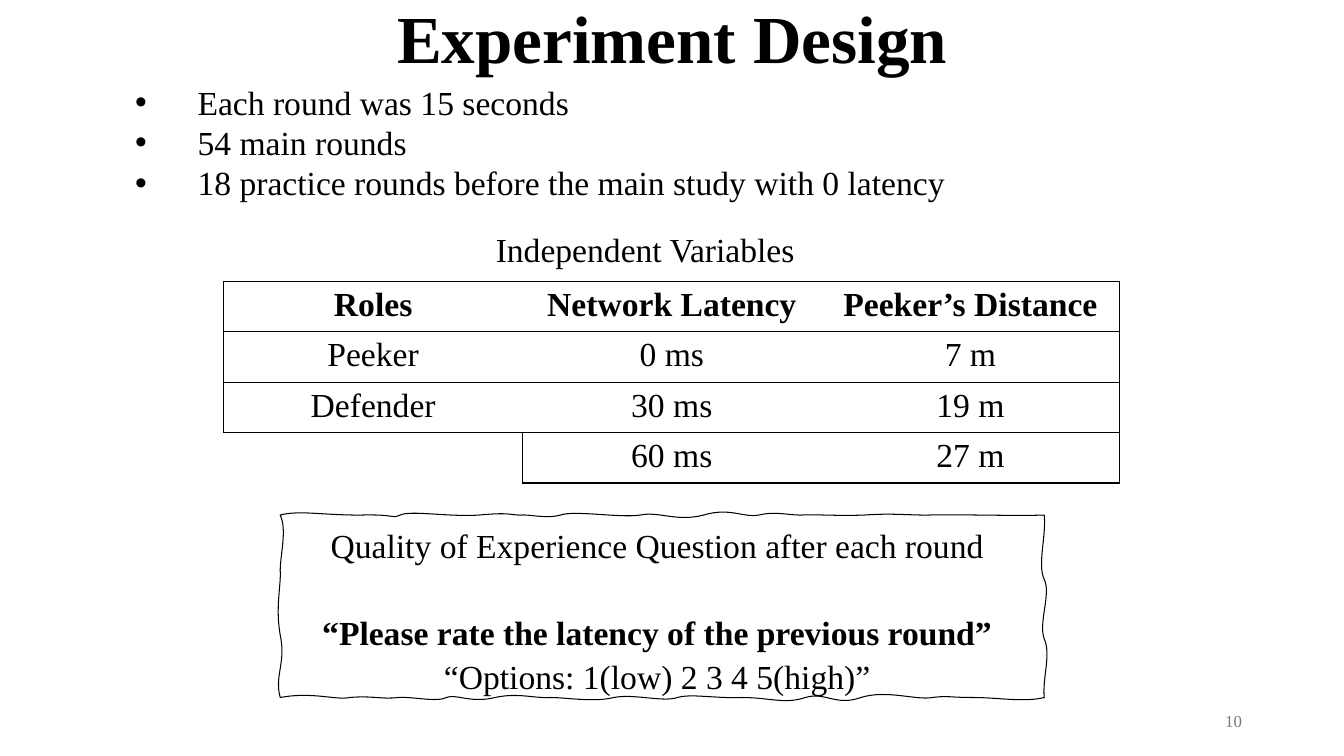
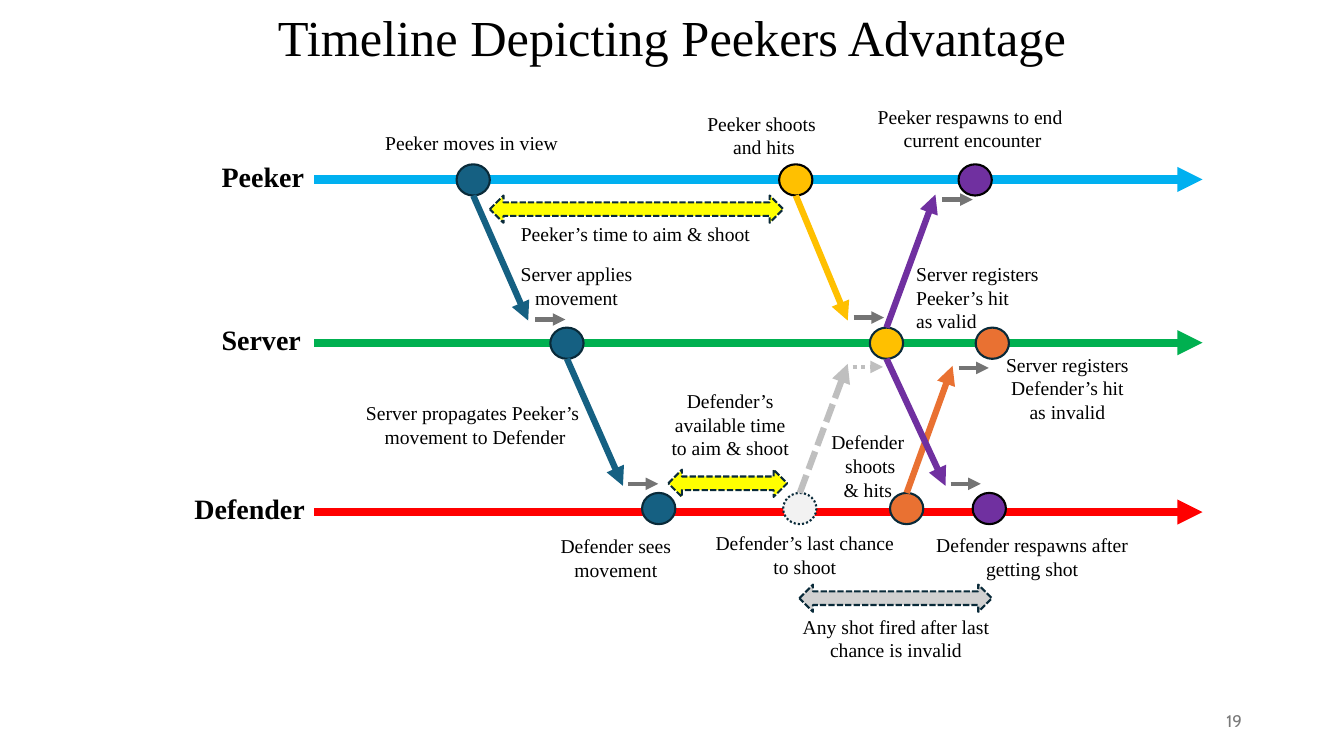
from lxml.etree import SubElement
from pptx import Presentation
from pptx.dml.color import RGBColor
from pptx.enum.dml import MSO_LINE as Dash
from pptx.enum.shapes import MSO_CONNECTOR as Connector, MSO_SHAPE as Preset
from pptx.enum.text import MSO_ANCHOR as Anchor, MSO_AUTO_SIZE as AutoSize, PP_ALIGN as Align
from pptx.oxml.ns import qn
from pptx.util import Emu, Pt

SCALE = 9144  # EMU in one px, 100 px to the inch
SERIF = "Times New Roman"
BLACK, MUTED, EDGE = "000000", "797979", "092A39"
BLUE, GOLD, ORANGE, PURPLE = "156082", "FFC000", "E97132", "7030A0"
YELLOW, HOP_GREY, PALE_GREY = "FFFF00", "747474", "BFBFBF"


def px(length):
    return Emu(round(length * SCALE))


def color(value):
    return RGBColor.from_string(value)


# Shared text and line helpers
def add_span(para, text, size, bold=False, ink=BLACK, font=SERIF):
    span = para.add_run()
    span.text = text
    span.font.name, span.font.size, span.font.bold = font, Pt(size), bold
    span.font.color.rgb = color(ink)


def write_lines(frame, lines, size, align=Align.CENTER, **style):
    frame.word_wrap = True
    for index, line in enumerate(lines):
        para = frame.paragraphs[0] if index == 0 else frame.add_paragraph()
        para.alignment = align
        add_span(para, line, size, **style)


def add_label(page, box, lines, size, align=Align.CENTER, anchor=Anchor.TOP, **style):
    frame = page.shapes.add_textbox(*map(px, box)).text_frame
    frame.vertical_anchor = anchor
    write_lines(frame, lines, size, align, **style)


def place(shape, box):
    shape.left, shape.top, shape.width, shape.height = map(px, box)


def set_line(line, ink, width, dash=None):
    line.color.rgb = color(ink)
    line.width = Pt(width)
    if dash:
        line.dash_style = dash


def add_arrow(page, start, end, ink, width, dash=None):
    arrow = page.shapes.add_connector(Connector.STRAIGHT, *map(px, (*start, *end)))
    set_line(arrow.line, ink, width, dash)
    properties = arrow.element.spPr
    SubElement(properties.find(qn("a:ln")), qn("a:tailEnd"), type="triangle")
    SubElement(properties, qn("a:effectLst"))
    return arrow


def add_preset(page, preset, box, fill, edge, dash=None):
    shape = page.shapes.add_shape(preset, *map(px, box))
    shape.shadow.inherit = False
    shape.fill.solid()
    shape.fill.fore_color.rgb = color(fill)
    set_line(shape.line, edge, 1.5, dash)
    return shape


def start_page(deck, layout, title, box, size, bold, number, number_font):
    page = deck.slides.add_slide(deck.slide_layouts[layout])
    heading = page.shapes.title
    place(heading, box)
    frame = heading.text_frame
    frame.auto_size = AutoSize.NONE
    frame.vertical_anchor = Anchor.TOP
    write_lines(frame, [title], size, bold=bold)
    frame.paragraphs[0].line_spacing = 0.9
    frame.paragraphs[0].space_before = Pt(0)
    add_label(page, (942, 695, 300, 40), [number], 12, Align.RIGHT, Anchor.MIDDLE,
              ink=MUTED, font=number_font)
    return page


# Experiment page
def fill_rounds(body, box):
    place(body, box)
    frame = body.text_frame
    frame.auto_size = AutoSize.NONE
    frame.vertical_anchor = Anchor.TOP
    write_lines(frame, [
        "Each round was 15 seconds",
        "54 main rounds",
        "18 practice rounds before the main study with 0 latency",
    ], 24, Align.LEFT)
    for para in frame.paragraphs:
        para.space_before = Pt(0)
        properties = para._p.get_or_add_pPr()
        properties.set("marL", str(px(162)))
        properties.set("indent", str(px(-62)))


def set_borders(cell, sides):
    properties = cell._tc.get_or_add_tcPr()
    for position, side in enumerate("LRTB"):
        line = SubElement(properties, qn("a:ln" + side), w=str(Pt(1)))
        if side in sides:
            paint = SubElement(line, qn("a:solidFill"))
            SubElement(paint, qn("a:srgbClr"), val=BLACK)
        else:
            SubElement(line, qn("a:noFill"))
        properties.insert(position, line)


def add_variables(page, box):
    left, top, width, height = box
    add_label(page, (left + 260, top - 57, 451, 50), ["Independent Variables"], 24, Align.LEFT)
    rows = [
        ("Roles", "Network Latency", "Peeker’s Distance"),
        ("Peeker", "0 ms", "7 m"),
        ("Defender", "30 ms", "19 m"),
        ("", "60 ms", "27 m"),
    ]
    table = page.shapes.add_table(len(rows), 3, *map(px, box)).table
    table.first_row = table.horz_banding = False
    for column in table.columns:
        column.width = px(width / 3)
    for row_index, row in enumerate(rows):
        table.rows[row_index].height = px(height / len(rows))
        for column_index, text in enumerate(row):
            cell = table.cell(row_index, column_index)
            cell.fill.background()
            if text:
                write_lines(cell.text_frame, [text], 24, bold=row_index == 0)
                outer = ("L", "", "R")[column_index]
                # The last row starts at its second column
                if row_index == 3 and column_index == 1:
                    outer = "L"
                set_borders(cell, "TB" + outer)
            else:
                set_borders(cell, "TR")


# Two control points and an end point for each curve, clockwise from top left
SKETCH = [
    (19, -5, 40, 0, 79, 0), (117, -1, 109, 4, 119, 0), (129, -5, 167, 2, 197, 0),
    (228, -3, 228, 0, 238, 0), (247, -1, 264, 4, 278, 0), (292, -5, 337, 3, 357, 0),
    (376, -4, 393, 7, 420, 0), (446, -8, 460, 3, 475, 0), (490, -4, 504, 0, 516, 0),
    (527, -1, 551, 1, 579, 0), (607, -2, 619, 0, 642, 0), (665, -1, 724, 1, 758, 0),
    (760, 22, 751, 49, 758, 64), (765, 78, 752, 107, 758, 123), (765, 138, 756, 162, 758, 181),
    (738, 186, 712, 181, 688, 181), (663, 181, 663, 179, 647, 181),
    (631, 184, 602, 173, 576, 181), (551, 190, 541, 175, 521, 181),
    (500, 188, 486, 181, 458, 181), (430, 182, 408, 177, 394, 181),
    (380, 186, 351, 177, 331, 181), (311, 186, 284, 181, 268, 181),
    (252, 182, 236, 176, 213, 181), (189, 187, 174, 177, 165, 181),
    (155, 186, 132, 180, 117, 181), (101, 183, 91, 179, 69, 181), (56, 184, 32, 175, 0, 181),
    (-6, 159, 6, 147, 0, 119), (-5, 91, 1, 70, 0, 55), (0, 39, 7, 15, 0, 0),
]


def bend_sides(shape, curves):
    """Turn each straight side of a freeform into a Bezier curve."""
    sides = list(shape.element.iter(qn("a:lnTo")))
    for side, curve in zip(sides, curves):
        bend = side.makeelement(qn("a:cubicBezTo"))
        for x, y in zip(curve[::2], curve[1::2]):
            SubElement(bend, qn("a:pt"), x=str(x), y=str(y))
        side.getparent().replace(side, bend)


def add_question(page, left, top):
    builder = page.shapes.build_freeform(0, 0, scale=SCALE)
    builder.add_line_segments([curve[4:] for curve in SKETCH], close=True)
    card = builder.convert_to_shape(px(left), px(top))
    bend_sides(card, SKETCH)
    card.shadow.inherit = False
    card.fill.background()
    set_line(card.line, BLACK, 0.75)
    frame = card.text_frame
    frame.vertical_anchor = Anchor.TOP
    frame.margin_right = px(20)
    frame.margin_top = px(7)
    write_lines(frame, [
        "Quality of Experience Question after each round",
        "“Please rate the latency of the previous round”",
        "“Options: 1(low) 2 3 4 5(high)”",
    ], 24)
    for para, spacing in zip(frame.paragraphs, (1.07, 1.07, 1.1)):
        para.line_spacing = spacing
    prompt = frame.paragraphs[1]
    prompt.space_before = Pt(31)
    prompt.runs[0].font.bold = True


def build_experiment(deck):
    page = start_page(deck, 1, "Experiment Design", (167, 0, 1000, 88), 48, True, "10", SERIF)
    fill_rounds(page.placeholders[1], (24, 76, 1266, 172))
    add_variables(page, (222, 279, 889, 200))
    add_question(page, 278, 511)


# Timeline page
def add_timeline(page, left, top):
    def at(x, y):
        return left + x, top + y

    # Lanes: name, colour, height of the line, top of its markers, left of its name
    lanes = {"Peeker": ("00B0F0", 79, 64, 30), "Server": ("00B050", 241, 226, 30),
             "Defender": ("FF0000", 409, 390, 3)}
    for name, (ink, y, _, name_left) in lanes.items():
        add_arrow(page, at(132, y), at(1013, y), ink, 6)
        add_label(page, (*at(name_left, y - 25), 140, 44), [name], 20, Align.LEFT, bold=True)

    # Event markers
    events = {
        "moves": ("Peeker", 273, BLUE, EDGE), "shoots": ("Peeker", 593, GOLD, BLACK),
        "respawns": ("Peeker", 771, PURPLE, BLACK), "applied": ("Server", 366, BLUE, EDGE),
        "valid": ("Server", 683, GOLD, EDGE), "invalid": ("Server", 788, ORANGE, EDGE),
        "seen": ("Defender", 457, BLUE, EDGE), "killed": ("Defender", 785, PURPLE, BLACK),
        "last chance": ("Defender", 597, "F2F2F2", EDGE),
        "late shot": ("Defender", 703, ORANGE, EDGE),
    }
    markers = {}
    for event, (lane, x, fill, edge) in events.items():
        dash = Dash.ROUND_DOT if event == "last chance" else None
        box = (*at(x, lanes[lane][2]), 33, 31)
        markers[event] = add_preset(page, Preset.OVAL, box, fill, edge, dash)

    # Messages between lanes: a rising one leaves the marker's top, a falling one its bottom
    for event, tip, ink, dash in [
        ("applied", (438, 383), BLUE, None), ("late shot", (765, 264), ORANGE, None),
        ("last chance", (661, 262), PALE_GREY, Dash.SQUARE_DOT),
        ("valid", (758, 383), PURPLE, None), ("moves", (344, 219), BLUE, None),
        ("shoots", (661, 219), GOLD, None), ("valid", (748, 94), PURPLE, None),
    ]:
        marker, end = markers[event], at(*tip)
        rising = px(end[1]) < marker.top
        foot = ((marker.left + marker.width / 2) / SCALE, (marker.top + marker.height) / SCALE)
        message = add_arrow(page, foot, end, ink, 4.5, dash)
        if rising:
            message.begin_connect(marker, 0)

    # Short processing delays
    for x, y in [(443, 381), (763, 381), (351, 218), (667, 216), (771, 266), (755, 99)]:
        add_arrow(page, at(x, y), at(x + 30, y), HOP_GREY, 3)
    add_arrow(page, at(666, 265), at(696, 265), PALE_GREY, 3, Dash.ROUND_DOT)

    # Time spans
    for x, y, width, fill in [(306, 95, 291, YELLOW), (483, 367, 118, YELLOW),
                              (613, 481, 191, "D1D1D1")]:
        add_preset(page, Preset.LEFT_RIGHT_ARROW, (*at(x, y), width, 27), fill, EDGE,
                   Dash.SQUARE_DOT)

    # Captions
    for x, y, width, lines in [
        (190, 26, 196, ["Peeker moves in view"]),
        (510, 7, 136, ["Peeker shoots ", "and hits"]),
        (680, 0, 210, ["Peeker respawns to end ", "current encounter"]),
        (325, 156, 134, ["Server applies", "movement"]),
        (325, 116, 251, ["Peeker’s time to aim & shoot"]),
        (364, 426, 134, ["Defender sees", "movement"]),
        (518, 423, 201, ["Defender’s last chance", "to shoot"]),
        (735, 425, 218, ["Defender respawns after", "getting shot"]),
        (451, 282, 187, ["Defender’s", "available time", "to aim & shoot"]),
        (623, 323, 116, ["Defender", " shoots", "& hits"]),
        (805, 246, 148, ["Server registers Defender’s hit as invalid"]),
        (596, 506, 226, ["Any shot fired after last chance is invalid"]),
        (128, 294, 327, ["Server propagates Peeker’s ", "movement to Defender"]),
    ]:
        add_label(page, (*at(x, y), width, 10 + 24 * len(lines)), lines, 14)
    add_label(page, (*at(719, 156), 288, 81),
              ["Server registers", "Peeker’s hit", "as valid"], 14, Align.LEFT)


def build_timeline(deck):
    page = start_page(deck, 5, "Timeline Depicting Peekers Advantage", (167, 8, 1000, 69),
                      36, False, "19", "Cabin")
    add_timeline(page, 180, 99)


def main():
    deck = Presentation()
    deck.slide_width, deck.slide_height = px(4000 / 3), px(750)
    build_experiment(deck)
    build_timeline(deck)
    deck.save("out.pptx")


if __name__ == "__main__":
    main()
